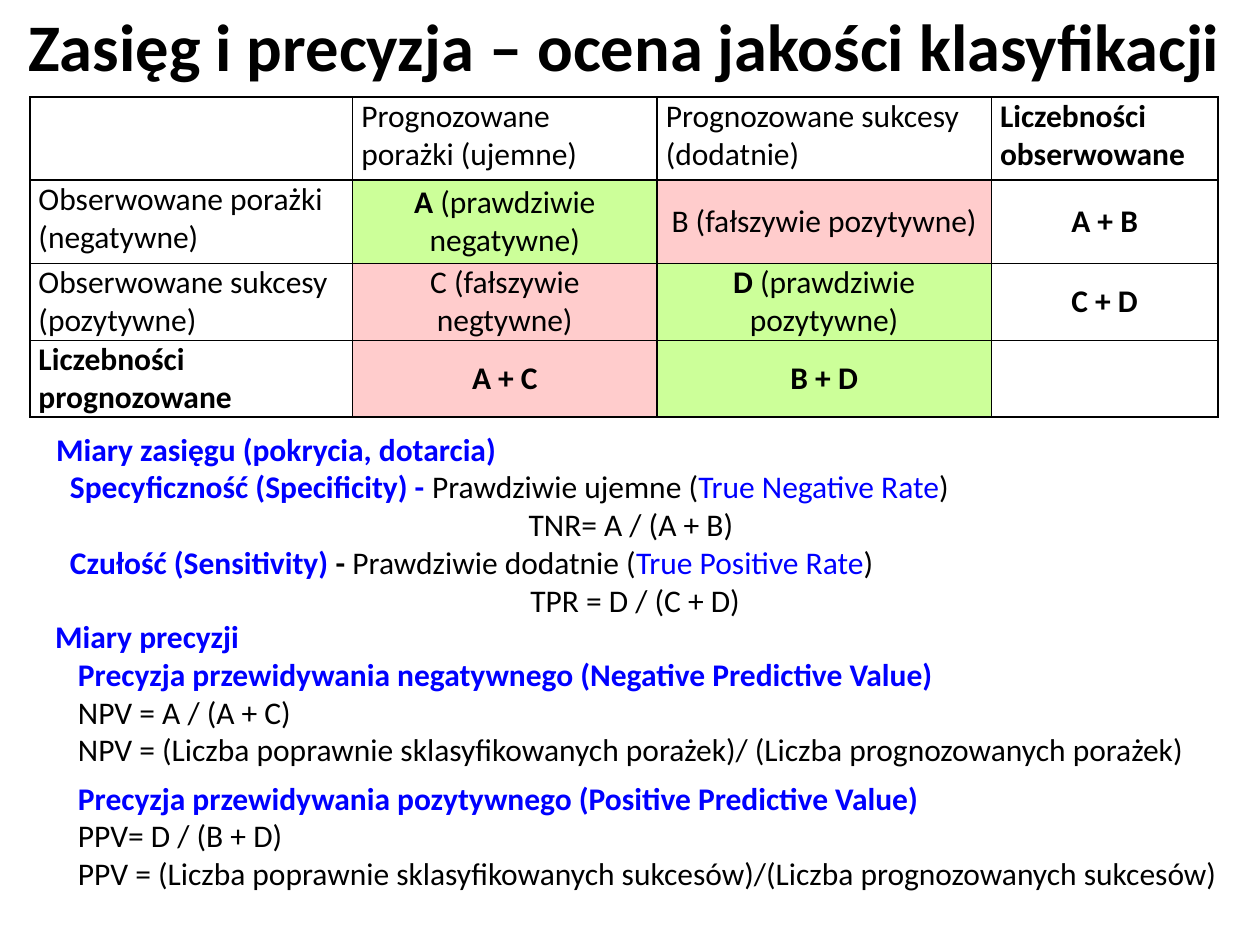
from pptx import Presentation
from pptx.dml.color import RGBColor
from pptx.enum.text import MSO_ANCHOR, MSO_AUTO_SIZE, PP_ALIGN
from pptx.oxml import parse_xml
from pptx.oxml.ns import nsdecls
from pptx.util import Pt

BLACK = RGBColor(0, 0, 0)
BLUE = RGBColor(0, 0, 255)
GREEN = RGBColor(0xCC, 0xFF, 0x99)
PINK = RGBColor(0xFF, 0xCC, 0xCC)
FONT = "Calibri"

PLAIN, BOLD = (BLACK, False), (BLACK, True)
TERM, HEAD = (BLUE, False), (BLUE, True)

TITLE = "Zasięg i precyzja – ocena jakości klasyfikacji"
ROWS = [
    [[], [("Prognozowane porażki (ujemne)", PLAIN)],
     [("Prognozowane sukcesy (dodatnie)", PLAIN)],
     [("Liczebności obserwowane", BOLD)]],
    [[("Obserwowane porażki (negatywne)", PLAIN)],
     [("A", BOLD), (" (prawdziwie negatywne)", PLAIN)],
     [("B (fałszywie pozytywne)", PLAIN)], [("A + B", BOLD)]],
    [[("Obserwowane sukcesy (pozytywne)", PLAIN)],
     [("C (fałszywie negtywne)", PLAIN)],
     [("D", BOLD), (" (prawdziwie pozytywne)", PLAIN)], [("C + D", BOLD)]],
    [[("Liczebności prognozowane", BOLD)],
     [("A + C", BOLD)], [("B + D", BOLD)], []],
]
FILLS = {(1, 1): GREEN, (1, 2): PINK, (2, 1): PINK,
         (2, 2): GREEN, (3, 1): PINK, (3, 2): GREEN}
COL_WIDTHS = [184.5, 174, 191, 129.5]
ROW_HEIGHTS = [47.5, 47.5, 43, 43]

# (left margin, first-line indent, space after, runs)
COVERAGE = [
    (0, 0, 0, [("Miary zasięgu (pokrycia, dotarcia)", HEAD)]),
    (7.2, 0.7, 0, [("Specyficzność (Specificity) - ", HEAD),
                   ("Prawdziwie ujemne (", PLAIN),
                   ("True Negative Rate", TERM), (")", PLAIN)]),
    (292, -22, 0, [("TNR= A / (A + B)", PLAIN)]),
    (7.2, 0.7, 0, [("Czułość (Sensitivity)", HEAD), (" - ", BOLD),
                   ("Prawdziwie dodatnie (", PLAIN),
                   ("True Positive Rate", TERM), (")", PLAIN)]),
    (271, 0, 0, [("TPR = D / (C + D)", PLAIN)]),
]
PRECISION = [(0, 0, 0, [("Miary precyzji", HEAD)])] + [
    (35, -22, after, [(text, style)]) for text, style, after in [
        ("Precyzja przewidywania negatywnego (Negative Predictive Value)", HEAD, 0),
        ("NPV = A / (A + C)", PLAIN, 0),
        ("NPV = (Liczba poprawnie sklasyfikowanych porażek)/ "
         "(Liczba prognozowanych porażek)", PLAIN, 6),
        ("Precyzja przewidywania pozytywnego (Positive Predictive Value)", HEAD, 0),
        ("PPV= D / (B + D)", PLAIN, 0),
        ("PPV = (Liczba poprawnie sklasyfikowanych sukcesów)/"
         "(Liczba prognozowanych sukcesów)", PLAIN, 6),
    ]
]
MEASURES = [((25, 242, 669, 119), COVERAGE), ((24.5, 349, 698.5, 166), PRECISION)]


def add_runs(p, runs, size=18):
    for text, (color, bold) in runs:
        r = p.add_run()
        r.text = text
        r.font.name = FONT
        r.font.size = Pt(size)
        r.font.bold = bold
        r.font.color.rgb = color


def add_title(s):
    sp = s.shapes.title
    sp.left, sp.top, sp.width, sp.height = Pt(-1.5), Pt(-2), Pt(717), Pt(62.5)
    tf = sp.text_frame
    tf.auto_size = MSO_AUTO_SIZE.NONE
    tf.vertical_anchor = MSO_ANCHOR.MIDDLE
    p = tf.paragraphs[0]
    p.alignment = PP_ALIGN.CENTER
    p.line_spacing = Pt(39)
    add_runs(p, [(TITLE, BOLD)], 38)


def add_borders(cell):
    tcPr = cell._tc.get_or_add_tcPr()
    for i, side in enumerate(("lnL", "lnR", "lnT", "lnB")):
        tcPr.insert(i, parse_xml(
            f'<a:{side} {nsdecls("a")} w="12700"><a:solidFill>'
            f'<a:srgbClr val="{BLACK}"/></a:solidFill></a:{side}>'))


def add_matrix(s):
    table = s.shapes.add_table(
        len(ROWS), len(COL_WIDTHS), Pt(17), Pt(55.5),
        Pt(sum(COL_WIDTHS)), Pt(sum(ROW_HEIGHTS))).table
    table.first_row = table.horz_banding = False
    for col, width in zip(table.columns, COL_WIDTHS):
        col.width = Pt(width)
    for row, height in zip(table.rows, ROW_HEIGHTS):
        row.height = Pt(height)
    for i, row in enumerate(ROWS):
        for j, runs in enumerate(row):
            cell = table.cell(i, j)
            cell.margin_left = cell.margin_right = Pt(5)
            cell.margin_top = cell.margin_bottom = 0
            if (i, j) in FILLS:
                cell.fill.solid()
                cell.fill.fore_color.rgb = FILLS[i, j]
            else:
                cell.fill.background()
            p = cell.text_frame.paragraphs[0]
            if i and j:
                cell.vertical_anchor = MSO_ANCHOR.MIDDLE
                p.alignment = PP_ALIGN.CENTER
            add_runs(p, runs)
            add_borders(cell)


def add_measures(s, box, lines):
    tf = s.shapes.add_textbox(*map(Pt, box)).text_frame
    tf.word_wrap = True
    for i, (margin, indent, after, runs) in enumerate(lines):
        p = tf.add_paragraph() if i else tf.paragraphs[0]
        pPr = p._p.get_or_add_pPr()
        pPr.set("marL", str(Pt(margin)))
        pPr.set("indent", str(Pt(indent)))
        p.space_after = Pt(after)
        add_runs(p, runs)


def main():
    prs = Presentation()
    prs.slide_width, prs.slide_height = Pt(720), Pt(540)
    s = prs.slides.add_slide(prs.slide_layouts[5])
    add_title(s)
    add_matrix(s)
    for box, lines in MEASURES:
        add_measures(s, box, lines)
    prs.save("out.pptx")


if __name__ == "__main__":
    main()
